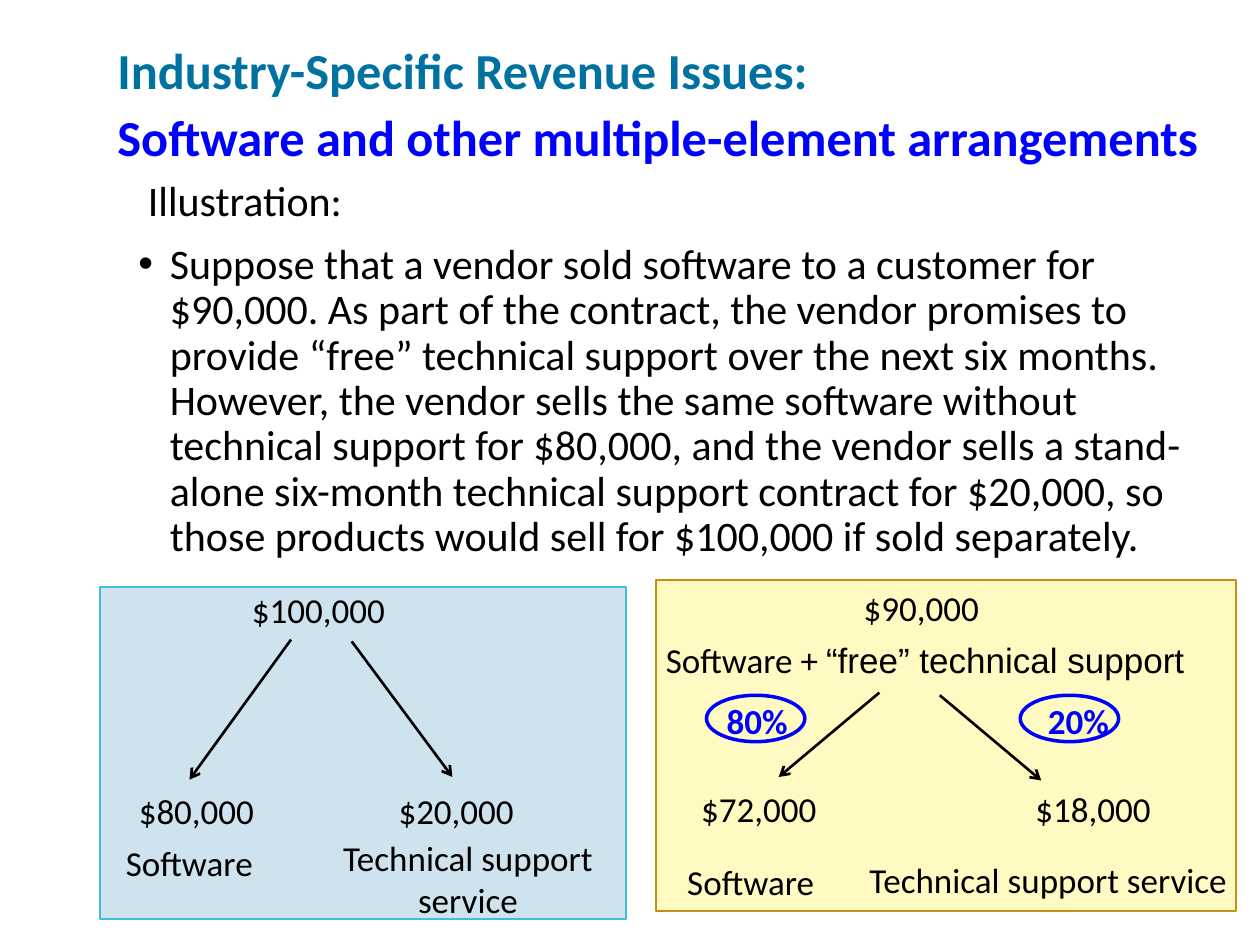
from lxml import etree
from pptx import Presentation
from pptx.dml.color import RGBColor
from pptx.enum.shapes import MSO_CONNECTOR, MSO_SHAPE
from pptx.enum.text import MSO_ANCHOR, MSO_AUTO_SIZE, PP_ALIGN
from pptx.oxml.ns import qn
from pptx.util import Pt

RECT, OVAL = MSO_SHAPE.RECTANGLE, MSO_SHAPE.OVAL
STRAIGHT = MSO_CONNECTOR.STRAIGHT
MIDDLE = MSO_ANCHOR.MIDDLE
GROW = MSO_AUTO_SIZE.SHAPE_TO_FIT_TEXT
CENTER = PP_ALIGN.CENTER
COLORS = {
    "heading": "0072A2", "accent": "0000FF", "text": "000000",
    "blue_fill": "CEE3ED", "blue_line": "42BDDA",
    "yellow_fill": "FFFAC2", "yellow_line": "C78F0F",
}
BODY = (
    "Suppose that a vendor sold software to a customer for $90,000. "
    "As part of the contract, the vendor promises to provide “free” technical "
    "support over the next six months. However, the vendor sells the same "
    "software without technical support for $80,000, and the vendor sells a "
    "stand-alone six-month technical support contract for $20,000, so those "
    "products would sell for $100,000 if sold separately."
)


def rgb(name):
    return RGBColor.from_string(COLORS[name])


def format_run(r, size, color="text", bold=False, font="Calibri"):
    r.font.name = font
    r.font.size = Pt(size)
    r.font.bold = bold
    r.font.color.rgb = rgb(color)


def add_box(s, x, y, w, h):
    tf = s.shapes.add_textbox(Pt(x), Pt(y), Pt(w), Pt(h)).text_frame
    tf.word_wrap = True
    return tf


def add_title(s):
    tf = add_box(s, 60, 0, 660, 114)
    tf.vertical_anchor = MIDDLE
    p = tf.paragraphs[0]
    p.text = ("Industry-Specific Revenue Issues:\v"
              "Software and other multiple-element arrangements")
    p.line_spacing = 1.1
    for r, color in zip(p.runs, ("heading", "accent")):
        format_run(r, 28.8, color, True)


def add_body(s):
    tf = add_box(s, 72, 99.5, 631, 417)
    tf.text = " Illustration:\n" + BODY
    for p in tf.paragraphs:
        p.line_spacing = 0.9
        format_run(p.runs[0], 24)
    p = tf.paragraphs[1]
    p.space_before = Pt(10)
    pPr = p._p.get_or_add_pPr()
    pPr.set("marL", str(Pt(18)))
    pPr.set("indent", str(Pt(-18)))
    etree.SubElement(pPr, qn("a:buFont")).set("typeface", "Arial")
    etree.SubElement(pPr, qn("a:buChar")).set("char", "•")


def add_label(s, text, x, y, w, h=31.5, color="text", bold=False):
    tf = add_box(s, x, y, w, h)
    tf.auto_size = GROW
    p = tf.paragraphs[0]
    p.text = text
    p.alignment = CENTER
    format_run(p.runs[0], 20, color, bold)
    return p


def add_shape(s, kind, x, y, w, h, line, width, fill=None):
    sp = s.shapes.add_shape(kind, Pt(x), Pt(y), Pt(w), Pt(h))
    sp.shadow.inherit = False
    if fill:
        sp.fill.solid()
        sp.fill.fore_color.rgb = rgb(fill)
    else:
        sp.fill.background()
    sp.line.color.rgb = rgb(line)
    sp.line.width = Pt(width)


def add_arrow(s, x1, y1, x2, y2):
    c = s.shapes.add_connector(STRAIGHT, Pt(x1), Pt(y1), Pt(x2), Pt(y2))
    c.line.color.rgb = rgb("text")
    c.line.width = Pt(1.5)
    etree.SubElement(c.line._get_or_add_ln(), qn("a:tailEnd")).set("type", "arrow")
    etree.SubElement(c._element.spPr, qn("a:effectLst"))


def add_contract_panel(s):
    add_shape(s, RECT, 375, 331.3, 331.5, 189.5, "yellow_line", 1, "yellow_fill")
    for text, oval_x, label_x in (("80%", 403.7, 392.5), ("20%", 583, 576)):
        add_shape(s, OVAL, oval_x, 397.3, 56.2, 26.5, "accent", 2)
        add_label(s, text, label_x, 396, 80.5, color="accent", bold=True)
    add_label(s, "$90,000", 478, 331.3, 97)
    p = add_label(s, "Software + ", 347.5, 361.3, 362.5)
    r = p.add_run()
    r.text = "“free” technical support"
    format_run(r, 20, font="Arial")
    add_arrow(s, 502.5, 395.8, 445, 444)
    add_arrow(s, 537, 397.3, 595, 446)
    add_label(s, "$72,000", 357.7, 446.3, 152)
    add_label(s, "$18,000", 548.7, 446.3, 152)
    add_label(s, "Software", 357.7, 488, 142.5, 26)
    add_label(s, "Technical support service", 478, 487, 242)


def add_separate_panel(s):
    add_shape(s, RECT, 57.3, 335.5, 300.5, 189.5, "blue_line", 1, "blue_fill")
    add_label(s, "$100,000", 133.5, 332.7, 97)
    add_arrow(s, 166.3, 365.5, 108.3, 445.5)
    add_arrow(s, 201, 366.5, 258.5, 444)
    add_label(s, "$80,000", 65.3, 447.7, 94)
    add_label(s, "$20,000", 208.7, 447.7, 104)
    add_label(s, "Software", 59.7, 477.3, 97, 26)
    add_label(s, "Technical support service", 167.7, 474.7, 199.5)


def main():
    prs = Presentation()
    prs.slide_width, prs.slide_height = Pt(720), Pt(540)
    s = prs.slides.add_slide(prs.slide_layouts[6])
    add_body(s)
    add_title(s)
    add_contract_panel(s)
    add_separate_panel(s)
    prs.save("out.pptx")


if __name__ == "__main__":
    main()
